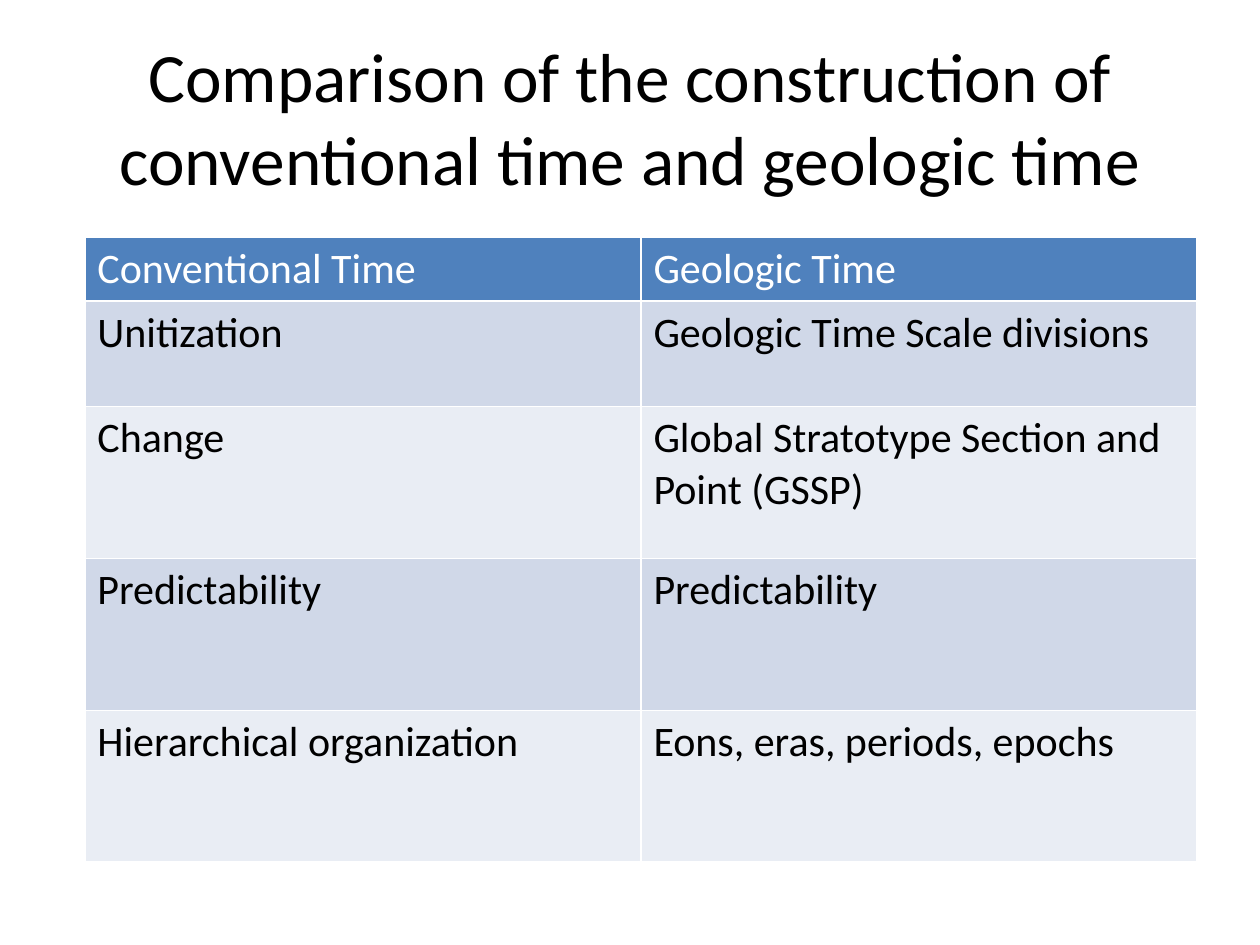
from dataclasses import dataclass

from pptx import Presentation
from pptx.dml.color import RGBColor
from pptx.enum.text import MSO_ANCHOR, MSO_AUTO_SIZE, PP_ALIGN
from pptx.util import Cm, Pt

FONT = "Calibri"
BLACK, WHITE = "000000", "FFFFFF"
HEADER_FILL = "4F81BD"
BAND_FILLS = ("D0D8E8", "E9EDF4")
COLUMN_WIDTH = 11.21


@dataclass
class ComparisonRow:
    conventional: str
    geologic: str
    height: float


ROWS = [
    ComparisonRow("Conventional Time", "Geologic Time", 1.24),
    ComparisonRow("Unitization", "Geologic Time Scale divisions", 2.13),
    ComparisonRow("Change", "Global Stratotype Section and Point (GSSP)", 3.06),
    ComparisonRow("Predictability", "Predictability", 3.06),
    ComparisonRow("Hierarchical organization", "Eons, eras, periods, epochs", 3.06),
]


def color(value: str) -> RGBColor:
    return RGBColor.from_string(value)


def format_runs(text_frame, size: float, font_color: str) -> None:
    for paragraph in text_frame.paragraphs:
        for run in paragraph.runs:
            run.font.name = FONT
            run.font.size = Pt(size)
            run.font.bold = False
            run.font.color.rgb = color(font_color)


def format_title(title, text: str) -> None:
    title.left, title.top = Cm(1.27), Cm(0.76)
    title.width, title.height = Cm(22.86), Cm(3.18)
    text_frame = title.text_frame
    text_frame.text = text
    text_frame.word_wrap = True
    text_frame.auto_size = MSO_AUTO_SIZE.NONE
    text_frame.vertical_anchor = MSO_ANCHOR.MIDDLE
    text_frame.paragraphs[0].alignment = PP_ALIGN.CENTER
    format_runs(text_frame, 39.6, BLACK)


def fill_cell(cell, text: str, fill: str, font_color: str) -> None:
    cell.text_frame.text = text
    cell.fill.solid()
    cell.fill.fore_color.rgb = color(fill)
    format_runs(cell.text_frame, 24, font_color)


def add_comparison(slide, rows: list[ComparisonRow]) -> None:
    height = sum(row.height for row in rows)
    table = slide.shapes.add_table(
        len(rows), 2, Cm(1.71), Cm(4.78), Cm(2 * COLUMN_WIDTH), Cm(height)
    ).table
    for column in table.columns:
        column.width = Cm(COLUMN_WIDTH)
    for index, row in enumerate(rows):
        table.rows[index].height = Cm(row.height)
        is_header = index == 0
        fill = HEADER_FILL if is_header else BAND_FILLS[(index - 1) % 2]
        for column_index, text in enumerate((row.conventional, row.geologic)):
            fill_cell(table.cell(index, column_index), text, fill,
                      WHITE if is_header else BLACK)


def main() -> None:
    presentation = Presentation()
    presentation.slide_width, presentation.slide_height = Cm(25.4), Cm(19.05)
    slide = presentation.slides.add_slide(presentation.slide_layouts[5])

    # Comparison table
    add_comparison(slide, ROWS)

    # Title, with a line break after the first line
    format_title(slide.shapes.title,
                 "Comparison of the construction of\vconventional time and geologic time")

    presentation.save("out.pptx")


if __name__ == "__main__":
    main()
